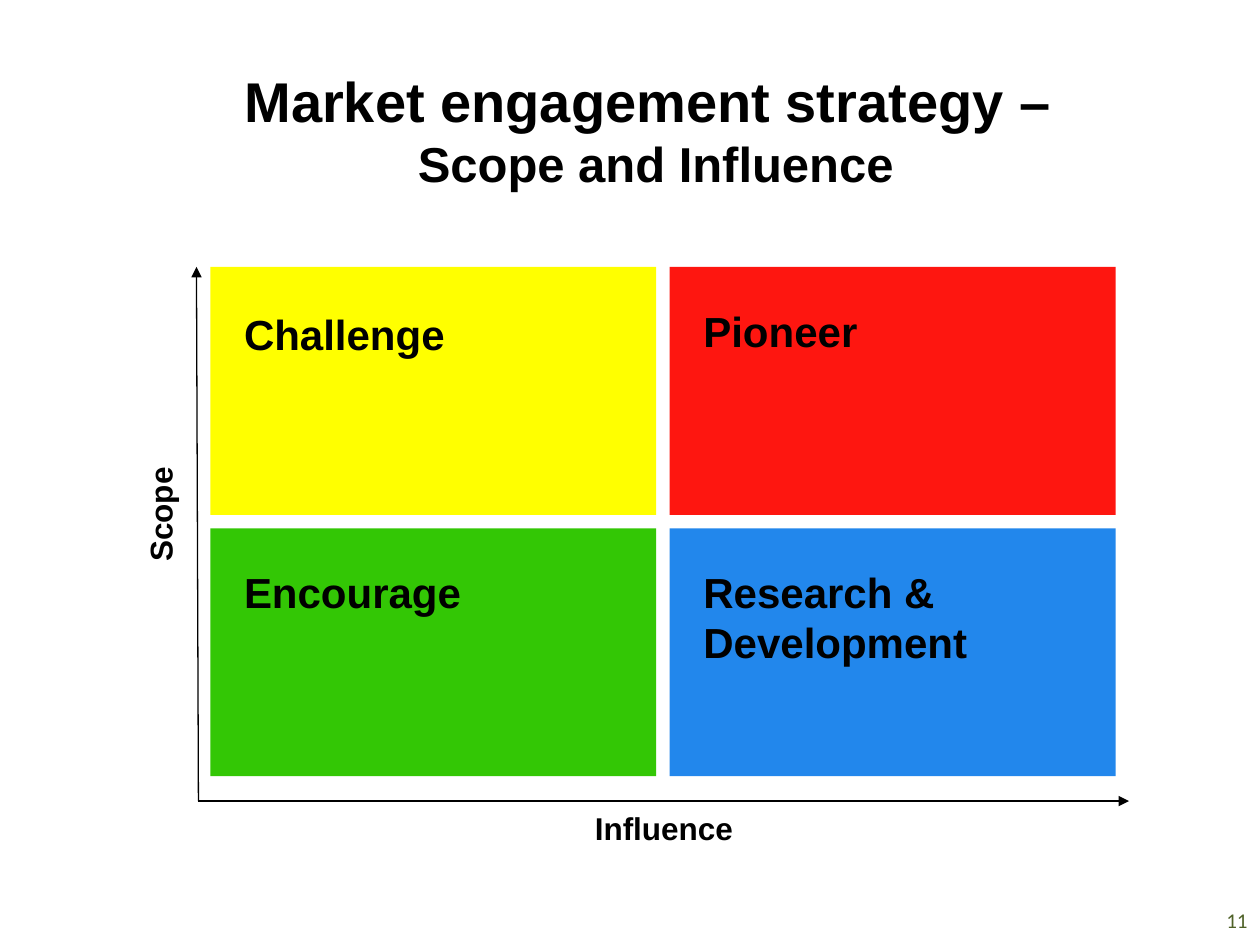
from dataclasses import dataclass

import pptx
import pptx.dml.color
import pptx.enum.shapes
import pptx.enum.text
import pptx.oxml.ns
import pptx.util
from lxml import etree

Cm = pptx.util.Cm
Align = pptx.enum.text.PP_ALIGN
Anchor = pptx.enum.text.MSO_ANCHOR
Fit = pptx.enum.text.MSO_AUTO_SIZE


@dataclass(frozen=True)
class Theme:
    font: str = "Arial"
    number_font: str = "Calibri"
    ink: str = "000000"
    number_ink: str = "4F6228"
    yellow: str = "FFFF00"
    red: str = "FE1610"
    green: str = "33C705"
    blue: str = "2287EC"
    title_size: int = 32
    subtitle_size: int = 28
    quadrant_size: int = 24
    axis_size: int = 18
    number_size: int = 12
    axis_width: float = 0.75


def colour(code):
    return pptx.dml.color.RGBColor.from_string(code)


class Painter:
    def __init__(self, page, theme):
        self.page = page
        self.theme = theme

    def block(self, left, top, width, height, fill):
        shape = self.page.shapes.add_shape(
            pptx.enum.shapes.MSO_SHAPE.RECTANGLE,
            Cm(left), Cm(top), Cm(width), Cm(height))
        shape.shadow.inherit = False
        shape.fill.solid()
        shape.fill.fore_color.rgb = colour(fill)
        shape.line.fill.background()

    def text(self, left, top, width, height, lines, align=Align.LEFT,
             anchor=Anchor.TOP, fit=Fit.SHAPE_TO_FIT_TEXT, font=None,
             ink=None, bold=True, upward=False):
        """Write (words, size) lines in one paragraph, split by line breaks."""
        box = self.page.shapes.add_textbox(Cm(left), Cm(top), Cm(width), Cm(height))
        frame = box.text_frame
        frame.word_wrap = True
        frame.auto_size = fit
        frame.vertical_anchor = anchor
        if upward:
            frame._txBody.bodyPr.set("vert", "vert270")
        para = frame.paragraphs[0]
        para.alignment = align
        for index, (words, size) in enumerate(lines):
            if index:
                para.add_line_break()
            span = para.add_run()
            span.text = words
            span.font.name = font or self.theme.font
            span.font.size = pptx.util.Pt(size)
            span.font.bold = bold
            span.font.color.rgb = colour(ink or self.theme.ink)

    def arrow(self, x1, y1, x2, y2):
        line = self.page.shapes.add_connector(
            pptx.enum.shapes.MSO_CONNECTOR.STRAIGHT,
            Cm(x1), Cm(y1), Cm(x2), Cm(y2))
        line.line.color.rgb = colour(self.theme.ink)
        line.line.width = pptx.util.Pt(self.theme.axis_width)
        qn = pptx.oxml.ns.qn
        etree.SubElement(line.line._get_or_add_ln(), qn("a:tailEnd"), type="triangle")
        etree.SubElement(line._element.spPr, qn("a:effectLst"))


def main():
    theme = Theme()
    deck = pptx.Presentation()
    deck.slide_width, deck.slide_height = Cm(25.4), Cm(19.05)
    painter = Painter(deck.slides.add_slide(deck.slide_layouts[6]), theme)

    # Page number
    painter.text(23.47, 18.03, 1.93, 1.02, [("11", theme.number_size)],
                 align=Align.RIGHT, anchor=Anchor.MIDDLE, fit=Fit.NONE,
                 font=theme.number_font, ink=theme.number_ink, bold=False)

    # Quadrants: column, row, fill, label, label inset from the top
    left, top, width, height, gap = 4.24, 5.38, 8.99, 5.0, 0.27
    quadrants = [
        (0, 0, theme.yellow, "Challenge", 0.71),
        (1, 0, theme.red, "Pioneer", 0.66),
        (0, 1, theme.green, "Encourage", 0.64),
        (1, 1, theme.blue, "Research & Development", 0.64),
    ]
    for column, row, fill, label, inset in quadrants:
        x = left + column * (width + gap)
        y = top + row * (height + gap)
        painter.block(x, y, width, height, fill)
        painter.text(x + 0.43, y + inset, 8.15, 1.28, [(label, theme.quadrant_size)])

    # Axes
    origin_x, origin_y = 4.0, 16.15
    painter.arrow(origin_x, origin_y, 3.96, top)
    painter.arrow(origin_x, origin_y, 22.76, origin_y)
    painter.text(10.26, 16.18, 6.25, 1.02, [("Influence", theme.axis_size)],
                 align=Align.CENTER)
    painter.text(2.72, 8.71, 1.27, 3.33, [("Scope", theme.axis_size)],
                 align=Align.CENTER, upward=True)

    # Title
    painter.text(1.09, 1.88, 24.26, 1.47,
                 [("Market engagement strategy – ", theme.title_size),
                  ("Scope and Influence", theme.subtitle_size)],
                 align=Align.CENTER, anchor=Anchor.MIDDLE, fit=Fit.NONE)

    deck.save("out.pptx")


if __name__ == "__main__":
    main()
